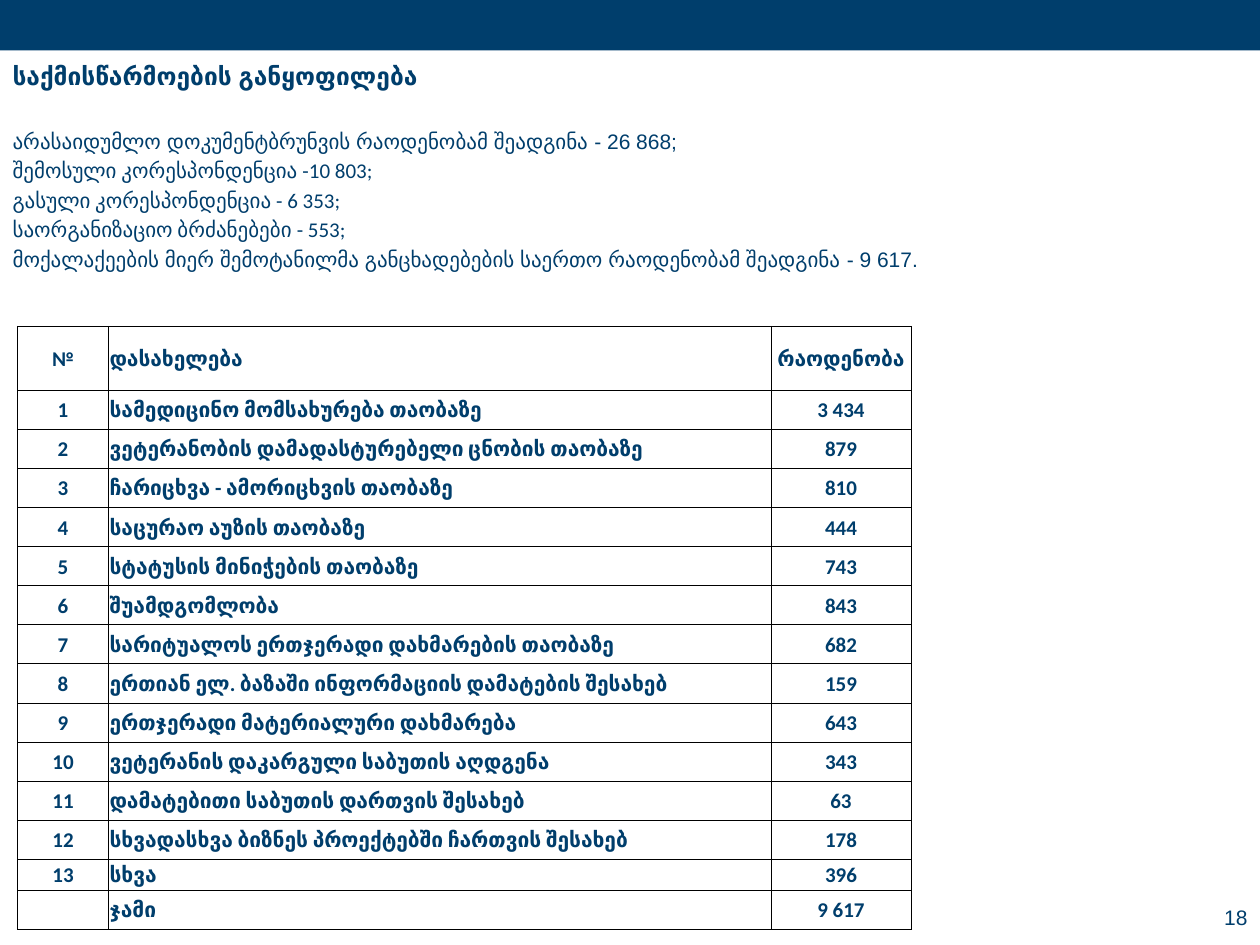
import pptx
import pptx.dml.color
import pptx.enum.shapes
import pptx.enum.text
import pptx.oxml
import pptx.oxml.ns
import pptx.util
from lxml import etree

NAVY = "003E6C"
WIDTH, HEIGHT = 10, 7.5
ALIGN = pptx.enum.text.PP_ALIGN
MIDDLE = pptx.enum.text.MSO_ANCHOR.MIDDLE
TOP = pptx.enum.text.MSO_ANCHOR.TOP

HEADING = "საქმისწარმოების განყოფილება"
SUMMARY = [
    ("არასაიდუმლო დოკუმენტბრუნვის რაოდენობამ შეადგინა - 26 868;", "Arial"),
    ("შემოსული კორესპონდენცია -10 803;", "Calibri"),
    ("გასული კორესპონდენცია - 6 353;", "Calibri"),
    ("საორგანიზაციო ბრძანებები - 553;", "Calibri"),
    ("მოქალაქეების მიერ შემოტანილმა განცხადებების საერთო რაოდენობამ შეადგინა - 9 617.", "Arial"),
]
APPLICATIONS = [
    ("სამედიცინო მომსახურება თაობაზე", "3 434"),
    ("ვეტერანობის დამადასტურებელი ცნობის თაობაზე", "879"),
    ("ჩარიცხვა - ამორიცხვის თაობაზე", "810"),
    ("საცურაო აუზის თაობაზე", "444"),
    ("სტატუსის მინიჭების თაობაზე", "743"),
    ("შუამდგომლობა", "843"),
    ("სარიტუალოს ერთჯერადი დახმარების თაობაზე", "682"),
    ("ერთიან ელ. ბაზაში ინფორმაციის დამატების შესახებ", "159"),
    ("ერთჯერადი მატერიალური დახმარება", "643"),
    ("ვეტერანის დაკარგული საბუთის აღდგენა", "343"),
    ("დამატებითი საბუთის დართვის შესახებ", "63"),
    ("სხვადასხვა ბიზნეს პროექტებში ჩართვის შესახებ", "178"),
    ("სხვა", "396"),
]
COLUMN_WIDTHS = [0.72, 5.26, 1.11]
COLUMN_ALIGN = [ALIGN.CENTER, ALIGN.LEFT, ALIGN.CENTER]
ROW_HEIGHTS = [0.51] + [0.31] * 12 + [0.25, 0.31]


def inches(*lengths):
    return [pptx.util.Inches(length) for length in lengths]


def color(hex_string):
    return pptx.dml.color.RGBColor.from_string(hex_string)


def style(para, size, face, bold=False, align=ALIGN.LEFT):
    para.alignment = align
    para.font.size = pptx.util.Pt(size)
    para.font.name = face
    para.font.bold = bold
    para.font.color.rgb = color(NAVY)


def place(box, left, top, width, height, anchor):
    """Move a text shape and set up its frame; return the frame."""
    box.left, box.top, box.width, box.height = inches(left, top, width, height)
    frame = box.text_frame
    frame.word_wrap = True
    frame.auto_size = pptx.enum.text.MSO_AUTO_SIZE.NONE
    frame.vertical_anchor = anchor
    frame.margin_left, frame.margin_right = inches(0.1, 0.1)
    frame.margin_top = frame.margin_bottom = 0
    return frame


def add_band(page):
    band = page.shapes.add_shape(pptx.enum.shapes.MSO_SHAPE.RECTANGLE, *inches(0, 0, WIDTH, 0.4))
    band.shadow.inherit = False
    band.fill.solid()
    band.fill.fore_color.rgb = color(NAVY)
    band.line.fill.background()


def fill_heading(page):
    frame = place(page.shapes.title, 0, 0.43, WIDTH, 0.34, MIDDLE)
    frame.text = HEADING
    style(frame.paragraphs[0], 14, "Arial", bold=True)


def fill_summary(page):
    frame = place(page.placeholders[1], 0, 1.02, WIDTH, 1.3, TOP)
    frame.text = "\n".join(line for line, face in SUMMARY)
    for number, (para, (line, face)) in enumerate(zip(frame.paragraphs, SUMMARY)):
        para.space_before = pptx.util.Pt(2.4 if number else 0)
        properties = para._p.get_or_add_pPr()
        properties.set("marL", "0")
        properties.set("indent", "0")
        etree.SubElement(properties, pptx.oxml.ns.qn("a:buNone"))
        style(para, 12, face)


def add_borders(cell):
    properties = cell._tc.get_or_add_tcPr()
    for position, side in enumerate("LRTB"):
        properties.insert(position, pptx.oxml.parse_xml(
            f'<a:ln{side} {pptx.oxml.ns.nsdecls("a")} w="6350">'
            f'<a:solidFill><a:srgbClr val="000000"/></a:solidFill></a:ln{side}>'))


def fill_cell(cell, words, align):
    cell.text = words
    cell.vertical_anchor = MIDDLE
    cell.margin_left, cell.margin_right, cell.margin_top, cell.margin_bottom = inches(0.01, 0.01, 0.01, 0)
    cell.fill.background()
    add_borders(cell)
    style(cell.text_frame.paragraphs[0], 12, "Calibri", bold=True, align=align)


def add_applications_table(page):
    numbered = [(str(number), *entry) for number, entry in enumerate(APPLICATIONS, 1)]
    rows = [("№", "დასახელება", "რაოდენობა"), *numbered, ("", "ჯამი", "9 617")]
    table = page.shapes.add_table(
        len(rows), len(COLUMN_WIDTHS),
        *inches(0.14, 2.59, sum(COLUMN_WIDTHS), sum(ROW_HEIGHTS))).table
    table.first_row = table.horz_banding = False
    for column, width in zip(table.columns, COLUMN_WIDTHS):
        column.width = pptx.util.Inches(width)
    for row, height, entry in zip(table.rows, ROW_HEIGHTS, rows):
        row.height = pptx.util.Inches(height)
        for cell, words, align in zip(row.cells, entry, COLUMN_ALIGN):
            fill_cell(cell, words, align)


def add_page_number(page):
    box = page.shapes.add_textbox(0, 0, 0, 0)
    frame = place(box, 8.83, 7.1, 1.17, 0.36, MIDDLE)
    frame.text = "18"
    style(frame.paragraphs[0], 12, "Arial", align=ALIGN.RIGHT)


def main():
    deck = pptx.Presentation()
    deck.slide_width, deck.slide_height = inches(WIDTH, HEIGHT)
    page = deck.slides.add_slide(deck.slide_layouts[1])
    add_band(page)
    fill_heading(page)
    fill_summary(page)
    add_applications_table(page)
    add_page_number(page)
    deck.save("out.pptx")


if __name__ == "__main__":
    main()
